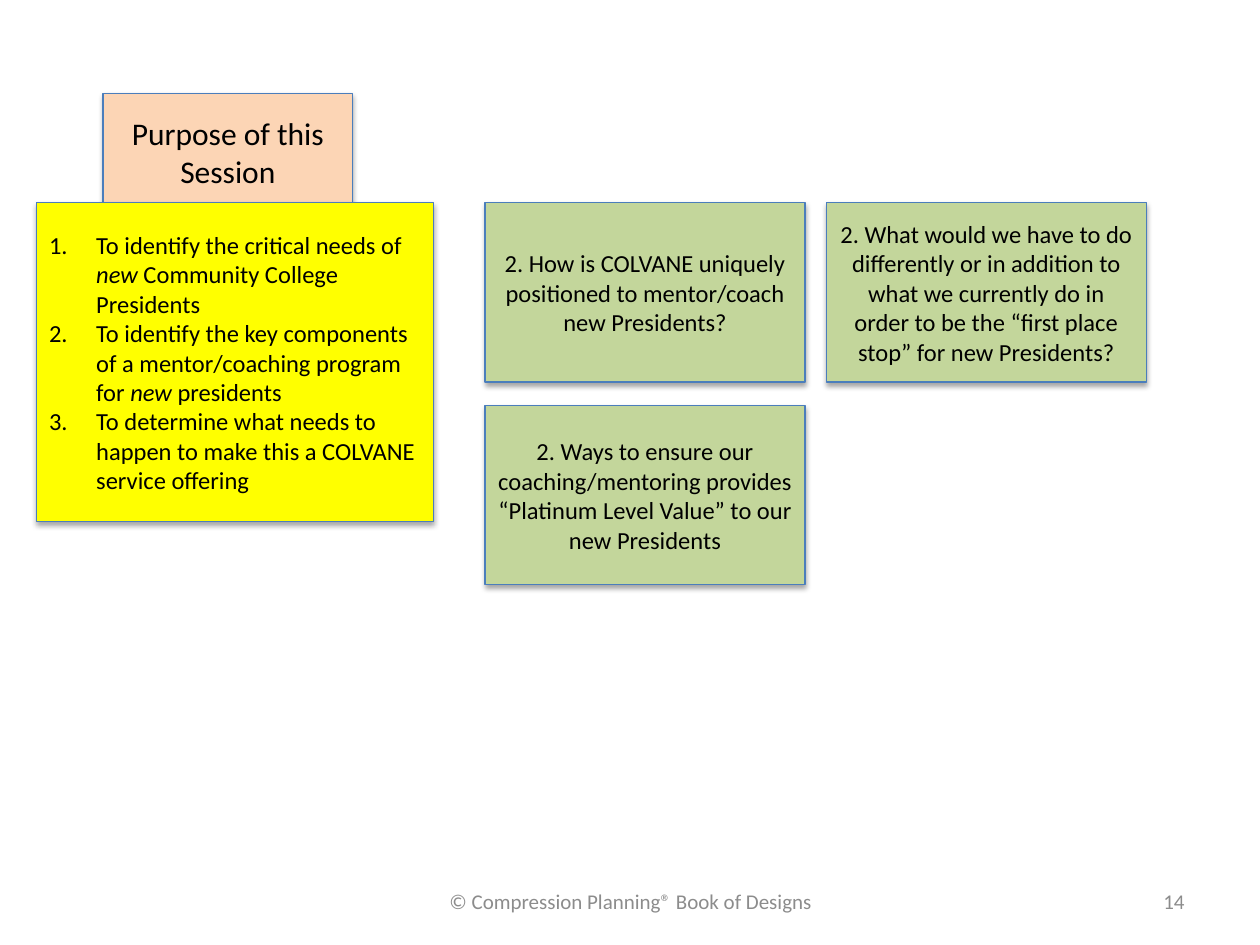
"""Build the session purpose slide with its question cards and footer."""
from dataclasses import dataclass

from lxml import etree
from pptx import Presentation
from pptx import util as u
from pptx.dml.color import RGBColor
from pptx.enum import shapes, text
from pptx.oxml import ns

LEFT, MID, RIGHT = text.PP_ALIGN.LEFT, text.PP_ALIGN.CENTER, text.PP_ALIGN.RIGHT
GREEN, PEACH, YELLOW = "C3D69B", "FCD5B5", "FFFF00"
BLUE, BLACK, GREY = "4B7EBC", "000000", "8C8C8C"
WIDE, HIGH = 6.45, 3.61
COL, ROW = 9.78, 4.09
STEP_X, STEP_Y = 6.88, 4.09


@dataclass
class Card:
    x: float
    y: float
    w: float
    h: float
    fill: str
    words: str = ""
    size: int = 14


@dataclass
class Note:
    x: float
    w: float
    words: str
    align: text.PP_ALIGN


def tint(code: str) -> RGBColor:
    return RGBColor.from_string(code)


def style(frame, size: int, code: str, align: text.PP_ALIGN) -> None:
    frame.word_wrap = True
    frame.vertical_anchor = text.MSO_ANCHOR.MIDDLE
    for para in frame.paragraphs:
        para.alignment = align
        for run in para.runs:
            run.font.name = "Calibri"
            run.font.size = u.Pt(size)
            run.font.color.rgb = tint(code)


def shade(shape) -> None:
    shape.shadow.inherit = False
    effect = shape._element.spPr.find(ns.qn("a:effectLst"))
    outer = etree.SubElement(
        effect, ns.qn("a:outerShdw"), blurRad=str(u.Pt(3.1)),
        dist=str(u.Pt(1.8)), dir="5400000", rotWithShape="0")
    hue = etree.SubElement(outer, ns.qn("a:srgbClr"), val=BLACK)
    etree.SubElement(hue, ns.qn("a:alpha"), val="35000")


def draw_card(slide, card: Card):
    shape = slide.shapes.add_shape(
        shapes.MSO_SHAPE.RECTANGLE,
        u.Cm(card.x), u.Cm(card.y), u.Cm(card.w), u.Cm(card.h))
    shape.fill.solid()
    shape.fill.fore_color.rgb = tint(card.fill)
    shape.line.color.rgb = tint(BLUE)
    shape.line.width = u.Pt(0.75)
    shade(shape)
    shape.text_frame.text = card.words
    style(shape.text_frame, card.size, BLACK, MID)
    return shape


def draw_list(slide, card: Card, items: list[tuple[str, ...]]) -> None:
    frame = draw_card(slide, card).text_frame
    for rank, parts in enumerate(items):
        para = frame.add_paragraph() if rank else frame.paragraphs[0]
        props = para._p.get_or_add_pPr()
        props.set("marL", str(u.Cm(0.95)))
        props.set("indent", str(-u.Cm(0.95)))
        etree.SubElement(props, ns.qn("a:buAutoNum"), type="arabicPeriod")
        for turn, part in enumerate(parts):
            run = para.add_run()
            run.text = part
            run.font.italic = turn % 2 == 1
    style(frame, card.size, BLACK, LEFT)


def draw_note(slide, note: Note) -> None:
    box = slide.shapes.add_textbox(
        u.Cm(note.x), u.Cm(17.65), u.Cm(note.w), u.Cm(1.02))
    box.text_frame.text = note.words
    style(box.text_frame, 12, GREY, note.align)


def main() -> None:
    deck = Presentation()
    deck.slide_width, deck.slide_height = u.Cm(25.4), u.Cm(19.05)
    slide = deck.slides.add_slide(deck.slide_layouts[6])

    draw_card(slide, Card(2.08, 1.88, 5.03, 2.36, PEACH,
                          "Purpose of this Session", 18))
    draw_list(slide, Card(0.74, ROW, 8, 6.43, YELLOW), [
        ("To identify the critical needs of ", "new",
         " Community College Presidents"),
        ("To identify the key components of a mentor/coaching program for ",
         "new ", "presidents"),
        ("To determine what needs to happen to make this a "
         "COLVANE service offering",),
    ])
    asks = [
        (0, 0, "2. How is COLVANE uniquely positioned to mentor/coach "
               "new Presidents?"),
        (1, 0, "2. What would we have to do differently or in addition to "
               "what we currently do in order to be the “first place stop” "
               "for new Presidents?"),
        (0, 1, "2. Ways to ensure our coaching/mentoring provides "
               "“Platinum Level Value” to our new Presidents"),
    ]
    for col, row, words in asks:
        draw_card(slide, Card(COL + col * STEP_X, ROW + row * STEP_Y,
                              WIDE, HIGH, GREEN, words))
    draw_note(slide, Note(8.69, 8.05,
                          "© Compression Planning® Book of Designs", MID))
    draw_note(slide, Note(18.21, 5.92, "14", RIGHT))
    deck.save("out.pptx")


if __name__ == "__main__":
    main()
